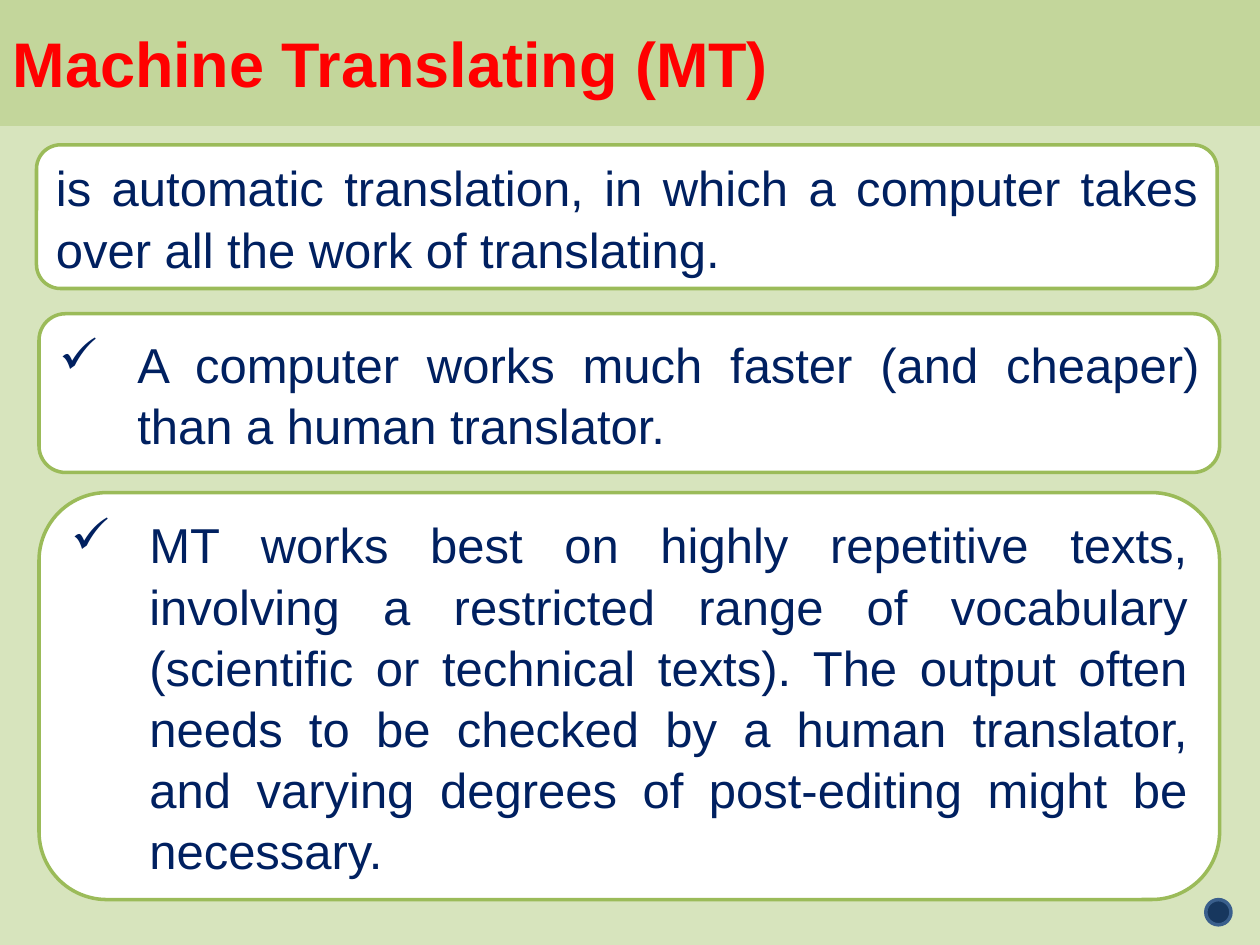
from lxml import etree
from pptx import Presentation
from pptx.dml.color import RGBColor
from pptx.enum.shapes import MSO_SHAPE as SHAPE
from pptx.enum.text import MSO_ANCHOR as ANCHOR, MSO_AUTO_SIZE as AUTO, PP_ALIGN as ALIGN
from pptx.oxml.ns import qn
from pptx.util import Inches, Pt

PALE_GREEN = RGBColor(0xD7, 0xE4, 0xBD)
BAND_GREEN = RGBColor(0xC3, 0xD6, 0x9B)
EDGE_GREEN = RGBColor(0x9B, 0xBB, 0x59)
WHITE = RGBColor(0xFF, 0xFF, 0xFF)
RED = RGBColor(0xFF, 0x00, 0x00)
NAVY = RGBColor(0x00, 0x20, 0x60)
DOT_BLUE = RGBColor(0x17, 0x37, 0x5E)
DOT_EDGE = RGBColor(0x3A, 0x5F, 0x8C)

# Text, whether it is a bullet, and box (left, top, width, height)
CARDS = [
    ("is automatic translation, in which a computer takes over all the work "
     "of translating.", False, (0.29, 1.15, 9.37, 1.14)),
    ("A computer works much faster (and cheaper) than a human translator.",
     True, (0.31, 2.49, 9.37, 1.26)),
    ("MT works best on highly repetitive texts, involving a restricted range of "
     "vocabulary (scientific or technical texts). The output often needs to be "
     "checked by a human translator, and varying degrees of post-editing might "
     "be necessary.", True, (0.31, 3.91, 9.37, 3.23)),
]


def paint(sp, fill, line):
    sp.fill.solid()
    sp.fill.fore_color.rgb = fill
    sp.line.color.rgb = line
    sp.line.width = Pt(2)


def add_shape(slide, kind, box, fill, line):
    sp = slide.shapes.add_shape(kind, *map(Inches, box))
    sp.shadow.inherit = False
    paint(sp, fill, line)
    return sp


def write(sp, text, size, color, align, bold=False):
    tf = sp.text_frame
    tf.word_wrap = True
    tf.auto_size = AUTO.NONE
    tf.vertical_anchor = ANCHOR.MIDDLE
    p = tf.paragraphs[0]
    p.text = text
    p.alignment = align
    p.font.name = "Arial"
    p.font.size = Pt(size)
    p.font.bold = bold
    p.font.color.rgb = color
    return p


def add_check_bullet(p):
    pPr = p._p.get_or_add_pPr()
    pPr.set("marL", str(Inches(0.62)))
    pPr.set("indent", str(-Inches(0.62)))
    bullet = etree.Element(qn("a:buChar"), char="✓")
    pPr.insert_element_before(bullet, "a:tabLst", "a:defRPr", "a:extLst")


def place_title(slide, box):
    title = slide.shapes.title
    title.left, title.top, title.width, title.height = map(Inches, box)
    paint(title, BAND_GREEN, BAND_GREEN)
    write(title, "Machine Translating (MT)", 36, RED, ALIGN.LEFT, bold=True)


def add_card(slide, text, bulleted, box):
    sp = add_shape(slide, SHAPE.ROUNDED_RECTANGLE, box, WHITE, EDGE_GREEN)
    p = write(sp, text, 28, NAVY, ALIGN.JUSTIFY)
    p.line_spacing = 1.04
    if bulleted:
        add_check_bullet(p)


def main():
    prs = Presentation()
    prs.slide_width, prs.slide_height = Inches(10), Inches(7.5)
    slide = prs.slides.add_slide(prs.slide_layouts[5])  # Title Only
    slide.background.fill.solid()
    slide.background.fill.fore_color.rgb = PALE_GREEN

    # Title band
    place_title(slide, (0, 0, 10, 0.99))
    # Corner dot
    add_shape(slide, SHAPE.OVAL, (9.57, 7.14, 0.2, 0.2), DOT_BLUE, DOT_EDGE)
    # Text cards
    for text, bulleted, box in CARDS:
        add_card(slide, text, bulleted, box)

    prs.save("out.pptx")


if __name__ == "__main__":
    main()
